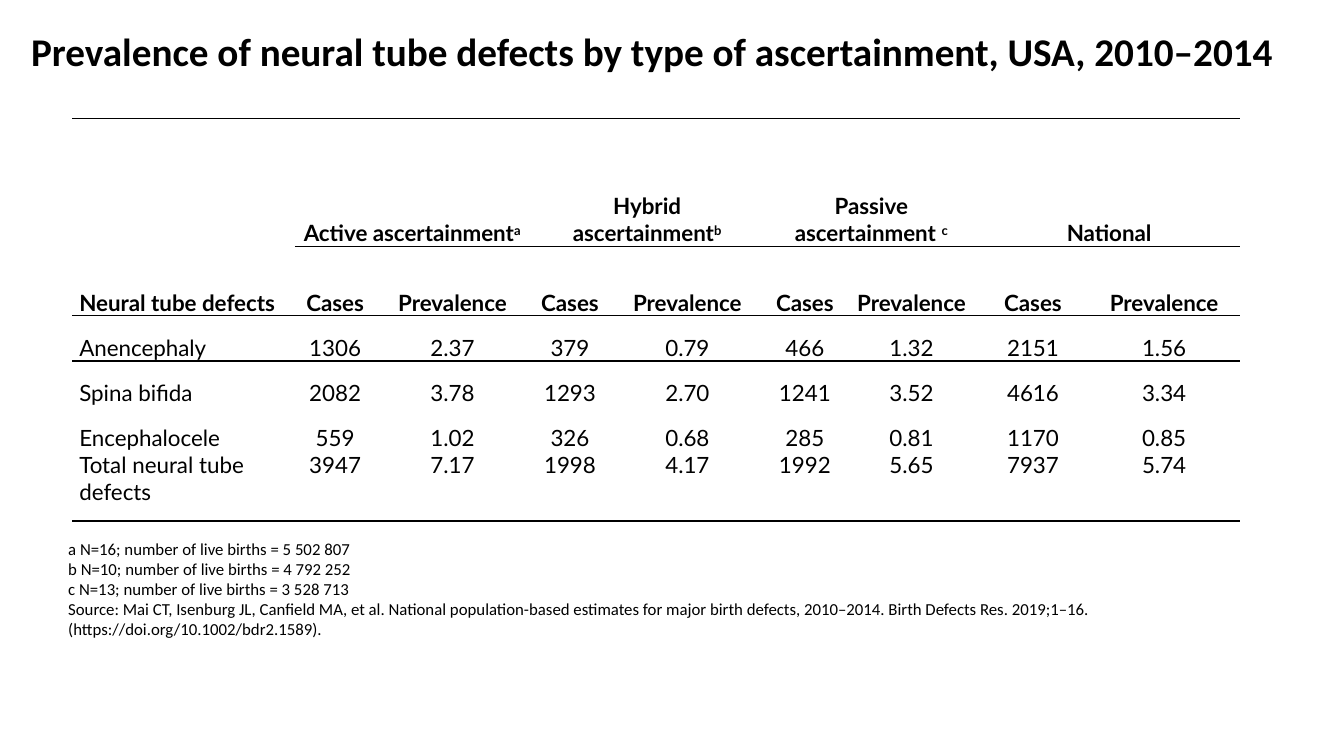
from lxml.etree import SubElement
from pptx import Presentation
from pptx.dml.color import RGBColor
from pptx.enum.text import MSO_ANCHOR as Anchor, MSO_AUTO_SIZE as AutoSize, PP_ALIGN as Align
from pptx.oxml import parse_xml
from pptx.oxml.ns import nsdecls, qn
from pptx.util import Cm, Pt

COLORS = {"ink": "000000"}
NO_GRID_STYLE = "{2D5ABB26-0587-4C30-8999-92F81FD0307C}"


def style(font, name, size, bold=False):
    font.name = name
    font.size = Pt(size)
    font.bold = bold
    font.color.rgb = RGBColor.from_string(COLORS["ink"])


def add_border(cell, side):
    line = parse_xml(
        f'<a:{side} {nsdecls("a")} w="12700"><a:solidFill>'
        f'<a:srgbClr val="{COLORS["ink"]}"/></a:solidFill></a:{side}>')
    properties = cell._tc.get_or_add_tcPr()
    properties.insert(len(properties.findall(qn("a:lnT"))), line)


prs = Presentation()
prs.slide_width, prs.slide_height = Cm(33.87), Cm(19.05)
slide = prs.slides.add_slide(prs.slide_layouts[5])

title = slide.shapes.title
title.left, title.top, title.width, title.height = Cm(0.53), Cm(0.56), Cm(32.56), Cm(1.45)
title.text_frame.text = "Prevalence of neural tube defects by type of ascertainment, USA, 2010–2014"
title.text_frame.vertical_anchor = Anchor.MIDDLE
heading = title.text_frame.paragraphs[0]
heading.alignment = Align.LEFT
style(heading.font, "Calibri", 28, True)

footnotes = slide.shapes.add_textbox(Cm(1.47), Cm(13.44), Cm(31.55), Cm(2.82)).text_frame
footnotes.word_wrap = True
footnotes.auto_size = AutoSize.SHAPE_TO_FIT_TEXT
footnotes.text = (
    "a N=16; number of live births = 5 502 807\n"
    "b N=10; number of live births = 4 792 252\n"
    "c N=13; number of live births = 3 528 713\v"
    "Source: Mai CT, Isenburg JL, Canfield MA, et al. National population-based estimates "
    "for major birth defects, 2010–2014. Birth Defects Res. 2019;1–16. "
    "(https://doi.org/10.1002/bdr2.1589).")
for note in footnotes.paragraphs:
    style(note.font, "Calibri", 12)

ascertainments = [("Active ascertainment", "a"), ("Hybrid ascertainment", "b"),
                  ("Passive ascertainment ", "c"), ("National", "")]
rows = [
    ["Neural tube defects"] + ["Cases", "Prevalence"] * len(ascertainments),
    ["Anencephaly", "1306", "2.37", "379", "0.79", "466", "1.32", "2151", "1.56"],
    ["Spina bifida", "2082", "3.78", "1293", "2.70", "1241", "3.52", "4616", "3.34"],
    ["Encephalocele", "559", "1.02", "326", "0.68", "285", "0.81", "1170", "0.85"],
    ["Total neural tube defects", "3947", "7.17", "1998", "4.17", "1992", "5.65", "7937", "5.74"],
]
column_widths = [5.61, 2.03, 3.89, 2.03, 3.89, 2.03, 3.35, 2.77, 3.84]
row_heights = [3.23, 1.75, 1.14, 1.14, 1.14, 1.75]
last_row = len(rows)

prevalence = slide.shapes.add_table(
    len(row_heights), len(column_widths), Cm(1.82), Cm(2.98),
    Cm(sum(column_widths)), Cm(sum(row_heights))).table
prevalence.first_row = prevalence.horz_banding = False
prevalence._tbl.tblPr.find(qn("a:tableStyleId")).text = NO_GRID_STYLE
for column, width in zip(prevalence.columns, column_widths):
    column.width = Cm(width)
for row, height in zip(prevalence.rows, row_heights):
    row.height = Cm(height)

for i, (group, mark) in enumerate(ascertainments):
    first = prevalence.cell(0, 1 + 2 * i)
    first.merge(prevalence.cell(0, 2 + 2 * i))
    label = first.text_frame.paragraphs[0]
    label.add_run().text = group
    if mark:
        note_mark = label.add_run()
        note_mark.text = mark
        note_mark._r.get_or_add_rPr().set("baseline", "30000")

for r, values in enumerate(rows, 1):
    for c, value in enumerate(values):
        prevalence.cell(r, c).text = value

for r in range(len(row_heights)):
    for c in range(len(column_widths)):
        cell = prevalence.cell(r, c)
        cell.fill.background()
        cell.margin_left = cell.margin_right = Cm(0.18)
        cell.margin_top = cell.margin_bottom = 0
        cell.vertical_anchor = Anchor.TOP if r == last_row else Anchor.BOTTOM
        entry = cell.text_frame.paragraphs[0]
        entry.alignment = Align.CENTER if c else Align.LEFT
        style(entry.font, "Lato", 16, r < 2)
        if r in (0, 2) or (r == 1 and c):
            add_border(cell, "lnT")
        if r in (1, last_row) or (r == 0 and c):
            add_border(cell, "lnB")

prs.save("out.pptx")
